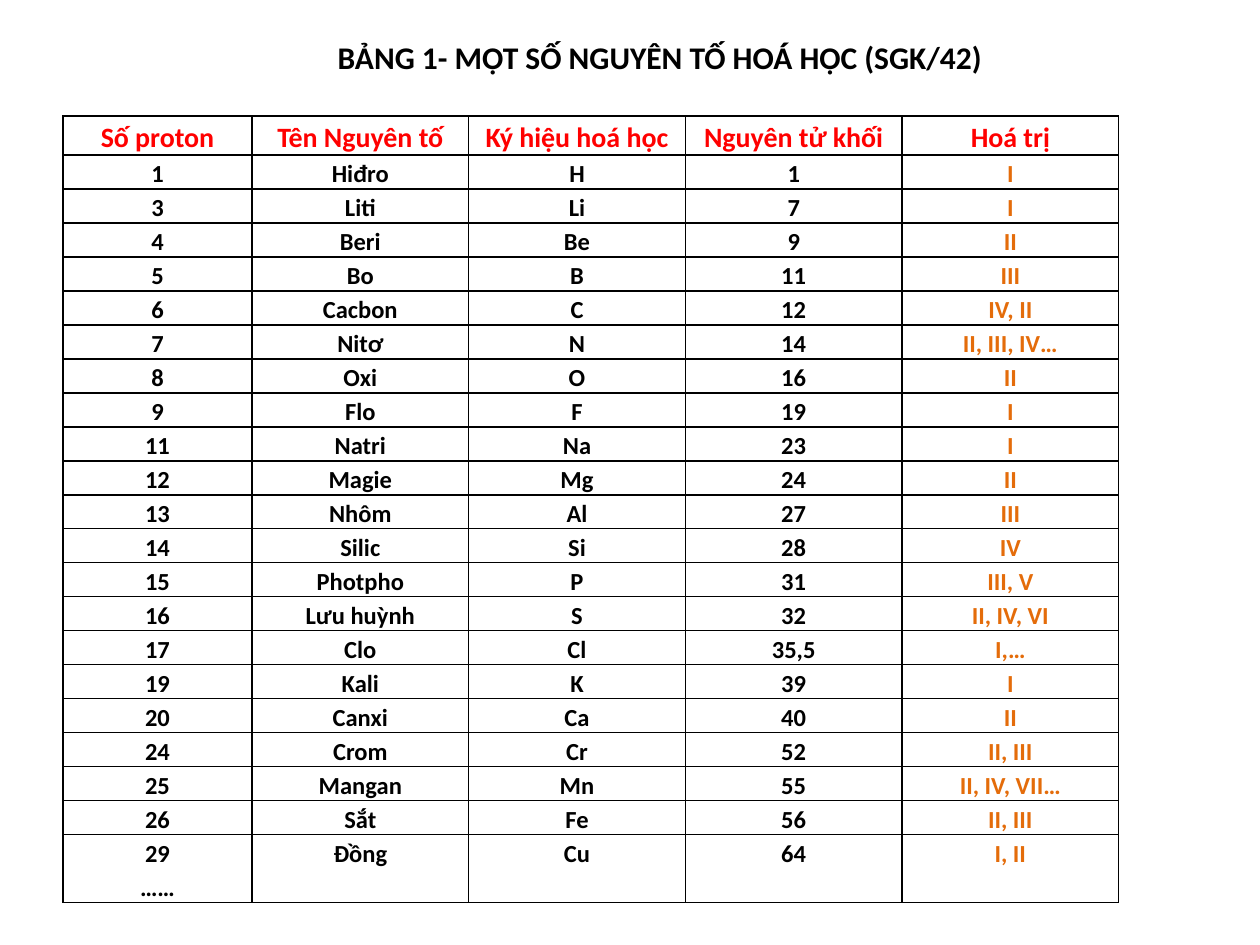
from dataclasses import astuple, dataclass

from lxml.etree import SubElement
from pptx import Presentation
from pptx.dml.color import RGBColor
from pptx.enum.text import MSO_ANCHOR, MSO_AUTO_SIZE, PP_ALIGN
from pptx.oxml.ns import qn
from pptx.util import Inches, Pt

BLACK = RGBColor(0x00, 0x00, 0x00)
RED = RGBColor(0xFF, 0x00, 0x00)
ORANGE = RGBColor(0xE4, 0x6C, 0x0A)
FONT = "Calibri"


@dataclass
class Element:
    protons: str
    name: str
    symbol: str
    mass: str
    valence: str


HEADER = ("Số proton", "Tên Nguyên tố", "Ký hiệu hoá học", "Nguyên tử khối", "Hoá trị")
ELEMENTS = [
    Element("1", "Hiđro", "H", "1", "I"),
    Element("3", "Liti", "Li", "7", "I"),
    Element("4", "Beri", "Be", "9", "II"),
    Element("5", "Bo", "B", "11", "III"),
    Element("6", "Cacbon", "C", "12", "IV, II"),
    Element("7", "Nitơ", "N", "14", "II, III, IV…"),
    Element("8", "Oxi", "O", "16", "II"),
    Element("9", "Flo", "F", "19", "I"),
    Element("11", "Natri", "Na", "23", "I"),
    Element("12", "Magie", "Mg", "24", "II"),
    Element("13", "Nhôm", "Al", "27", "III"),
    Element("14", "Silic", "Si", "28", "IV"),
    Element("15", "Photpho", "P", "31", "III, V"),
    Element("16", "Lưu huỳnh", "S", "32", "II, IV, VI"),
    Element("17", "Clo", "Cl", "35,5", "I,…"),
    Element("19", "Kali", "K", "39", "I"),
    Element("20", "Canxi", "Ca", "40", "II"),
    Element("24", "Crom", "Cr", "52", "II, III"),
    Element("25", "Mangan", "Mn", "55", "II, IV, VII…"),
    Element("26", "Sắt", "Fe", "56", "II, III"),
    Element("29\n……", "Đồng", "Cu", "64", "I, II"),
]
COL_WIDTHS = (1.5, 1.72, 1.72, 1.72, 1.72)
HEADER_HEIGHT = 0.31
LINE_HEIGHT = 0.27


def write_text(tf, text: str, *, size: float, color: RGBColor = BLACK,
               align: PP_ALIGN = PP_ALIGN.CENTER, spacing: float = 1.15) -> None:
    tf.text = text
    for p in tf.paragraphs:
        p.alignment = align
        p.line_spacing = spacing
        for r in p.runs:
            r.font.name = FONT
            r.font.size = Pt(size)
            r.font.bold = True
            r.font.color.rgb = color


def set_borders(cell, color: RGBColor = BLACK, width: float = 1) -> None:
    tc_pr = cell._tc.get_or_add_tcPr()
    for i, side in enumerate(("a:lnL", "a:lnR", "a:lnT", "a:lnB")):
        ln = SubElement(tc_pr, qn(side), w=str(Pt(width)))
        fill = SubElement(ln, qn("a:solidFill"))
        SubElement(fill, qn("a:srgbClr"), val=str(color))
        tc_pr.insert(i, ln)


def fill_cell(cell, text: str, *, size: float, color: RGBColor, anchor: MSO_ANCHOR) -> None:
    cell.margin_left = cell.margin_right = cell.margin_top = cell.margin_bottom = 0
    cell.vertical_anchor = anchor
    cell.fill.background()
    set_borders(cell)
    write_text(cell.text_frame, text, size=size, color=color)


def add_title(slide, text: str) -> None:
    sp = slide.shapes.title
    sp.left, sp.top, sp.width, sp.height = (Inches(v) for v in (2.58, 0.25, 5.33, 0.4))
    tf = sp.text_frame
    tf.word_wrap = False
    tf.auto_size = MSO_AUTO_SIZE.SHAPE_TO_FIT_TEXT
    tf.vertical_anchor = MSO_ANCHOR.TOP
    write_text(tf, text, size=18, align=PP_ALIGN.LEFT, spacing=1.0)


def add_element_table(slide, elements: list[Element]) -> None:
    rows = [HEADER, *map(astuple, elements)]
    frame = slide.shapes.add_table(len(rows), len(HEADER), Inches(0.5), Inches(0.92),
                                   Inches(sum(COL_WIDTHS)), Inches(6.21))
    table = frame.table
    table.first_row = table.horz_banding = False
    for col, width in zip(table.columns, COL_WIDTHS):
        col.width = Inches(width)
    for i, values in enumerate(rows):
        lines = max(len(v.splitlines()) for v in values)
        table.rows[i].height = Inches(HEADER_HEIGHT if i == 0 else lines * LINE_HEIGHT)
        anchor = MSO_ANCHOR.TOP if lines > 1 else MSO_ANCHOR.MIDDLE
        for j, text in enumerate(values):
            body_color = ORANGE if j == len(HEADER) - 1 else BLACK
            fill_cell(table.cell(i, j), text, size=16 if i == 0 else 14,
                      color=RED if i == 0 else body_color, anchor=anchor)


def main() -> None:
    prs = Presentation()
    prs.slide_width, prs.slide_height = Inches(10), Inches(7.5)
    slide = prs.slides.add_slide(prs.slide_layouts[5])
    add_title(slide, "BẢNG 1- MỘT SỐ NGUYÊN TỐ HOÁ HỌC (SGK/42)")
    add_element_table(slide, ELEMENTS)
    prs.save("out.pptx")


if __name__ == "__main__":
    main()
